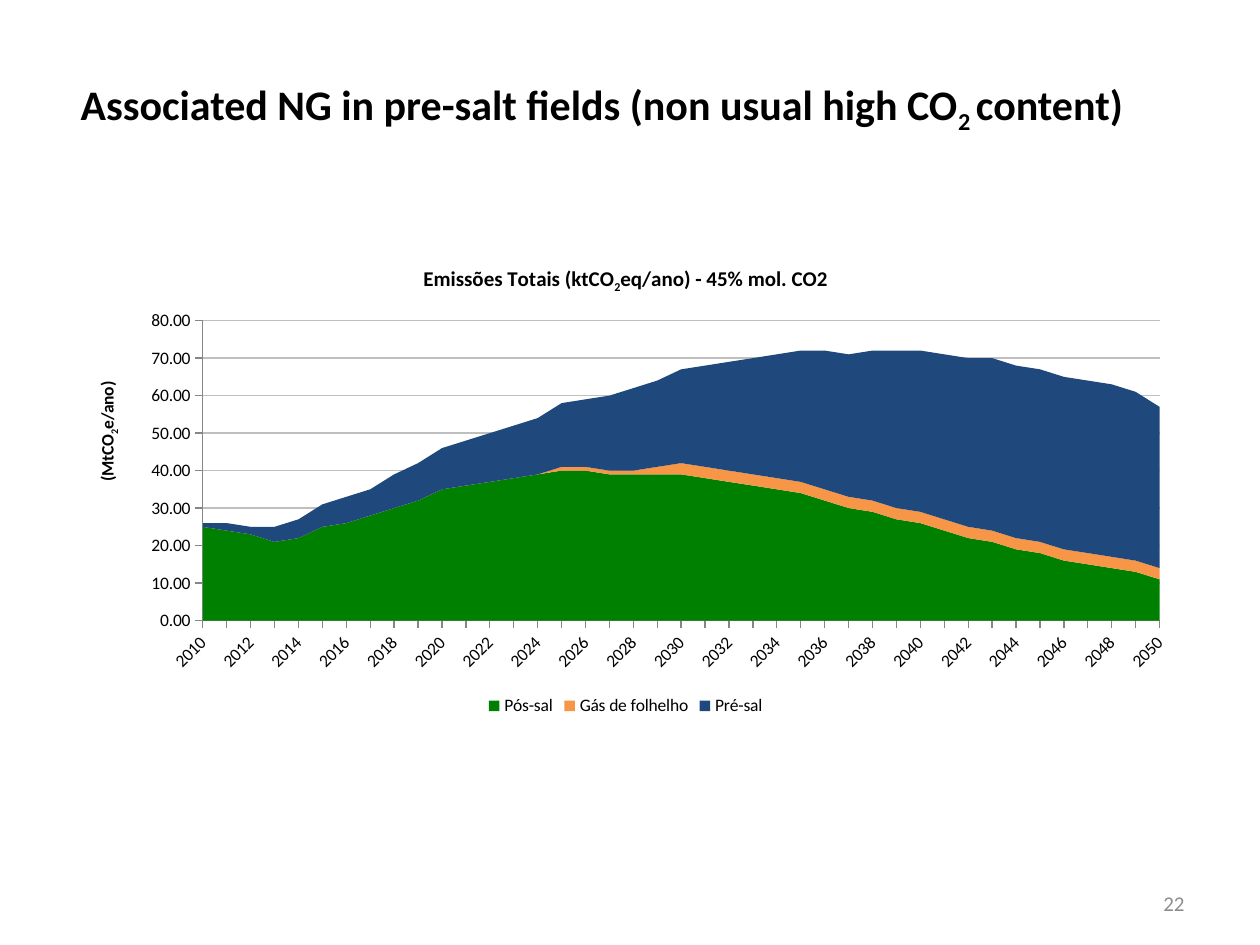
import dataclasses

import lxml.etree
import pptx
import pptx.chart.data
import pptx.dml.color
import pptx.enum.chart
import pptx.enum.text
import pptx.oxml.ns
import pptx.util

Pt = pptx.util.Pt
qn = pptx.oxml.ns.qn


@dataclasses.dataclass(frozen=True)
class Theme:
    font: str = "Calibri"
    text: str = "000000"
    muted: str = "8C8C8C"
    grid: str = "BFBFBF"
    axis: str = "868686"
    heading_size: int = 24
    number_size: int = 12
    chart_title_size: int = 12
    label_size: int = 10


THEME = Theme()
YEARS = range(2010, 2051)
SERIES = [
    ("Pós-sal", "008000",
     [25, 24, 23, 21, 22, 25, 26, 28, 30, 32, 35, 36, 37, 38, 39, 40, 40, 39, 39, 39, 39,
      38, 37, 36, 35, 34, 32, 30, 29, 27, 26, 24, 22, 21, 19, 18, 16, 15, 14, 13, 11]),
    ("Gás de folhelho", "F79646", [0] * 15 + [1] * 4 + [2] + [3] * 21),
    ("Pré-sal", "1F497D",
     [1, 2, 2, 4, 5, 6, 7, 7, 9, 10, 11, 12, 13, 14, 15, 17, 18, 20, 22, 23, 25,
      27, 29, 31, 33, 35, 37, 38, 40, 42, 43, 44, 45, 46, 46, 46, 46, 46, 46, 45, 43]),
]


def rgb(value):
    return pptx.dml.color.RGBColor.from_string(value)


def style_font(font, size, color=THEME.text, bold=False):
    font.name = THEME.font
    font.size = Pt(size)
    font.bold = bold
    font.color.rgb = rgb(color)


def write_with_subscript(para, before, subscript, after):
    for text in (before, subscript, after):
        span = para.add_run()
        span.text = text
        if text == subscript:
            span.font._element.set("baseline", "-25000")


def add_heading(page):
    box = page.shapes.title
    box.left, box.top, box.width, box.height = Pt(38.9), Pt(34.6), Pt(653), Pt(50.4)
    frame = box.text_frame
    frame.auto_size = pptx.enum.text.MSO_AUTO_SIZE.NONE
    frame.vertical_anchor = pptx.enum.text.MSO_ANCHOR.TOP
    para = frame.paragraphs[0]
    para.alignment = pptx.enum.text.PP_ALIGN.JUSTIFY
    para.line_spacing = 1.2
    para.space_before = Pt(6)
    style_font(para.font, THEME.heading_size, bold=True)
    write_with_subscript(para, "Associated NG in pre-salt fields (non usual high CO", "2 ", "content)")


def add_page_number(page, number):
    box = page.shapes.add_textbox(Pt(516), Pt(501.5), Pt(168), Pt(28.8))
    frame = box.text_frame
    frame.word_wrap = True
    frame.vertical_anchor = pptx.enum.text.MSO_ANCHOR.MIDDLE
    para = frame.paragraphs[0]
    para.text = str(number)
    para.alignment = pptx.enum.text.PP_ALIGN.RIGHT
    style_font(para.font, THEME.number_size, THEME.muted)


def make_layout(**values):
    layout = lxml.etree.Element(qn("c:layout"))
    manual = lxml.etree.SubElement(layout, qn("c:manualLayout"))
    for tag, value in values.items():
        lxml.etree.SubElement(manual, qn("c:" + tag)).set("val", str(value))
    return layout


def replace_layout(parent, layout, position):
    for old in parent.findall(qn("c:layout")):
        parent.remove(old)
    parent.insert(position, layout)


def style_axis(axis):
    axis.major_tick_mark = pptx.enum.chart.XL_TICK_MARK.OUTSIDE
    axis.minor_tick_mark = pptx.enum.chart.XL_TICK_MARK.NONE
    axis.format.line.color.rgb = rgb(THEME.axis)
    axis.format.line.width = Pt(0.75)
    style_font(axis.tick_labels.font, THEME.label_size)


def style_year_axis(axis):
    style_axis(axis)
    axis.has_major_gridlines = False
    element = axis._element
    element.find(qn("c:txPr")).find(qn("a:bodyPr")).set("rot", "-2700000")
    last = element.find(qn("c:noMultiLvlLbl"))
    for tag, step in (("c:tickLblSkip", 2), ("c:tickMarkSkip", 1)):
        skip = lxml.etree.Element(qn(tag))
        skip.set("val", str(step))
        last.addprevious(skip)


def style_value_axis(axis):
    style_axis(axis)
    axis.minimum_scale, axis.maximum_scale, axis.major_unit = 0, 80, 10
    axis.tick_labels.number_format = "#,##0.00"
    axis.tick_labels.number_format_is_linked = False
    axis.has_major_gridlines = True
    axis.major_gridlines.format.line.color.rgb = rgb(THEME.grid)
    axis.major_gridlines.format.line.width = Pt(0.75)
    axis._element.find(qn("c:crossBetween")).set("val", "midCat")
    frame = axis.axis_title.text_frame
    style_font(frame.paragraphs[0].font, THEME.label_size, bold=True)
    write_with_subscript(frame.paragraphs[0], "(MtCO", "2", "e/ano)")
    direction = frame._element.find(qn("a:bodyPr"))
    direction.set("rot", "-5400000")
    direction.set("vert", "horz")
    replace_layout(axis.axis_title._element,
                   make_layout(xMode="edge", yMode="edge", x=0.02, y=0.28), 1)


def add_emissions_chart(page):
    data = pptx.chart.data.CategoryChartData(number_format="0")
    data.categories = [str(year) for year in YEARS]
    for name, _, values in SERIES:
        data.add_series(name, values)
    chart = page.shapes.add_chart(
        pptx.enum.chart.XL_CHART_TYPE.AREA_STACKED,
        Pt(39.6), Pt(139.7), Pt(635.8), Pt(272.2), data).chart
    style_font(chart.font, THEME.label_size)

    chart.has_title = True
    para = chart.chart_title.text_frame.paragraphs[0]
    style_font(para.font, THEME.chart_title_size, bold=True)
    write_with_subscript(para, "Emissões Totais (ktCO", "2", "eq/ano) - 45% mol. CO2")
    chart.chart_title.include_in_layout = False

    chart.has_legend = True
    chart.legend.position = pptx.enum.chart.XL_LEGEND_POSITION.BOTTOM
    chart.legend.include_in_layout = False
    style_font(chart.legend.font, THEME.label_size)

    plot = chart.plots[0]
    plot.vary_by_categories = False
    for series, (_, color, _) in zip(plot.series, SERIES):
        series.format.fill.solid()
        series.format.fill.fore_color.rgb = rgb(color)
        series.format.line.fill.background()
    style_year_axis(chart.category_axis)
    style_value_axis(chart.value_axis)
    area = chart._chartSpace.chart.plotArea
    replace_layout(area, make_layout(layoutTarget="inner", xMode="edge", yMode="edge",
                                     x=0.12, y=0.16, w=0.86, h=0.63), 0)


def main():
    deck = pptx.Presentation()
    deck.slide_width, deck.slide_height = Pt(720), Pt(540)
    page = deck.slides.add_slide(deck.slide_layouts[5])
    add_page_number(page, 22)
    add_emissions_chart(page)
    add_heading(page)
    deck.save("out.pptx")


if __name__ == "__main__":
    main()
